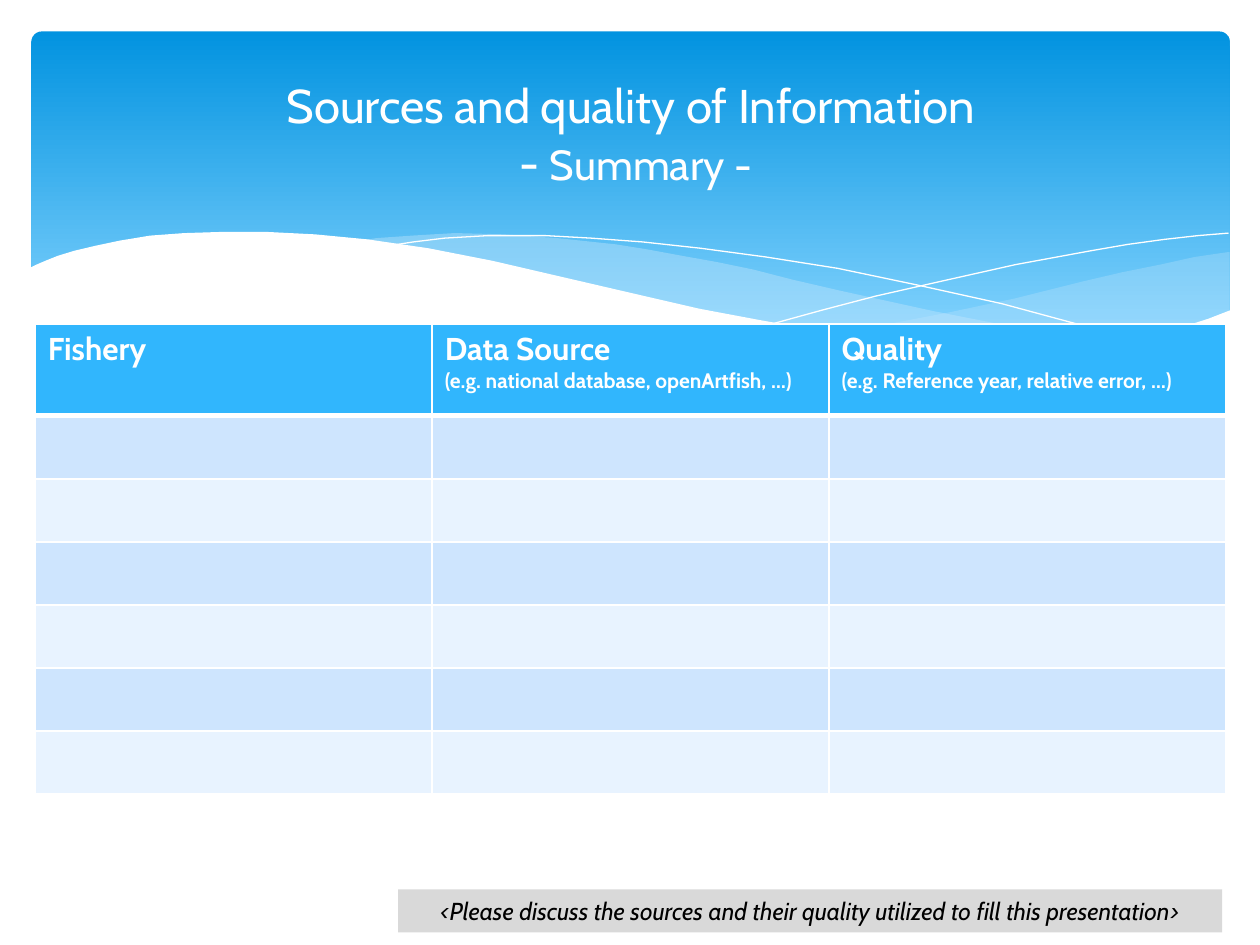
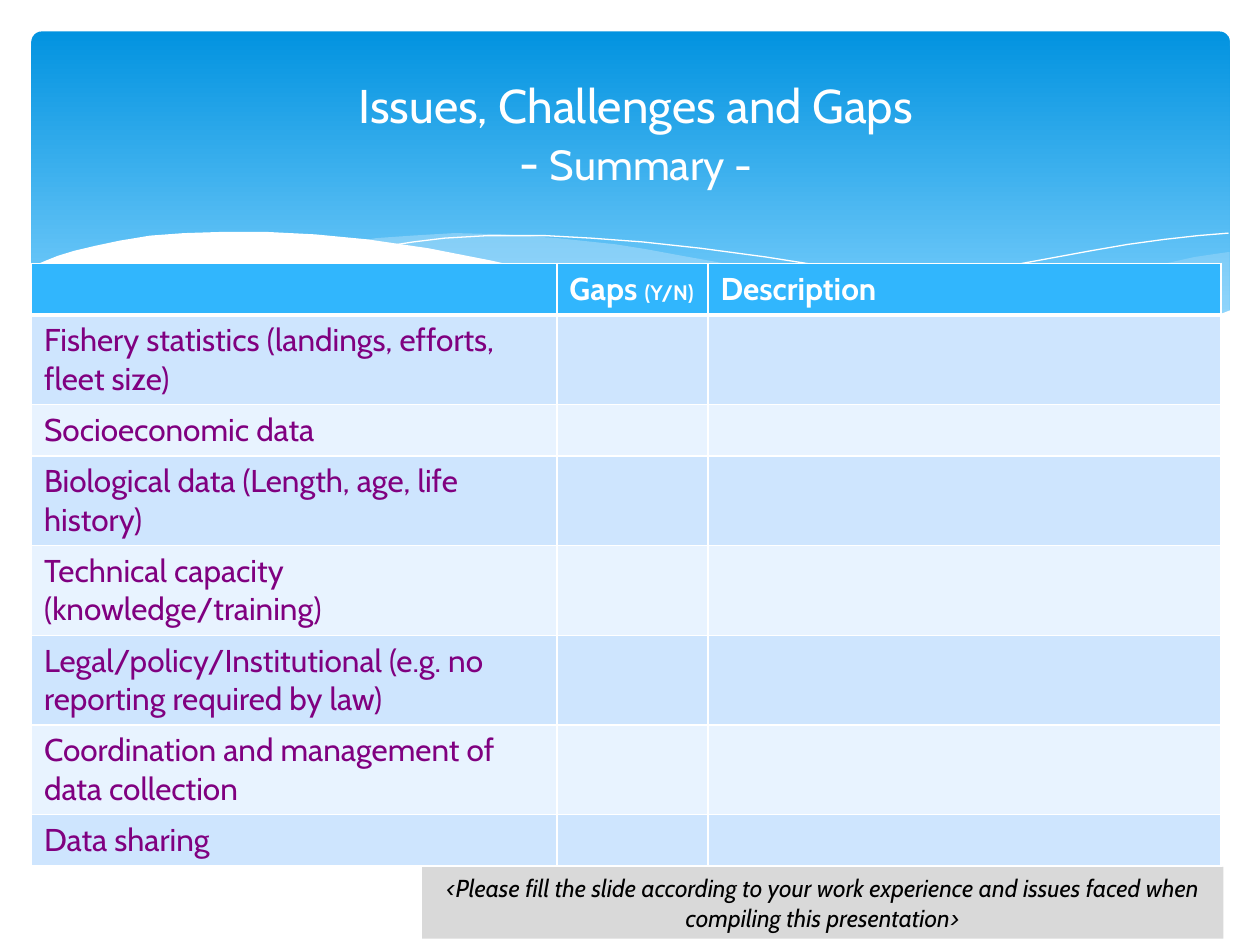
from copy import deepcopy

from lxml.etree import SubElement
from pptx import Presentation
from pptx.dml.color import RGBColor
from pptx.enum.shapes import MSO_SHAPE
from pptx.enum.text import MSO_ANCHOR, MSO_AUTO_SIZE, PP_ALIGN
from pptx.oxml.ns import qn
from pptx.util import Pt

EMU_PER_PX = 9144
PAGE = (0, 0, 1000, 750)
TITLE_BOX = (28, 37, 953, 137)
FONT = "Cabin"
WHITE, BLACK, PURPLE = "FFFFFF", "000000", "800080"
SKY_TOP, SKY_BOTTOM, MIST = "0293E0", "83D3FE", "C6E7FC"
HEADER_BLUE, NOTE_GRAY = "31B6FD", "D9D9D9"
ROW_TINTS = ("CEE5FE", "E8F3FF")

RIGHT_SWELL = [
    (975, 200), (948, 204), (921, 210), (891, 216), (861, 223), (805, 237),
    (753, 248), (706, 257), (661, 265), (691, 269), (719, 272), (745, 275),
    (781, 277), (814, 278), (844, 277), (872, 274), (897, 270), (921, 265),
    (942, 259), (963, 252), (976, 247), (976, 200),
]
MIDDLE_SWELL = [
    (893, 273), (866, 269), (807, 260), (741, 247), (668, 231), (629, 222),
    (598, 214), (569, 208), (541, 203), (514, 198), (489, 194), (442, 189),
    (399, 186), (361, 185), (328, 187), (299, 189), (286, 191), (323, 196),
    (362, 203), (404, 211), (449, 222), (530, 240), (601, 255), (650, 264),
    (695, 270), (736, 275), (773, 277), (807, 278), (848, 277), (876, 275),
]
FALLING_LINE = [
    (309, 195), (328, 192), (353, 189), (387, 187), (433, 187), (469, 189),
    (510, 192), (556, 197), (608, 204), (665, 213), (727, 226), (795, 241),
    (869, 261), (907, 272),
]
RISING_LINE = [
    (613, 257), (653, 246), (695, 235), (748, 223), (806, 210), (866, 199),
    (895, 194), (924, 190), (951, 187), (975, 185),
]
FOREGROUND_WAVE = [
    (977, 246), (959, 253), (940, 259), (920, 265), (899, 269), (875, 273),
    (850, 275), (823, 277), (793, 276), (761, 275), (726, 272), (688, 268),
    (648, 262), (603, 254), (555, 245), (503, 233), (447, 220), (391, 207),
    (340, 197), (292, 190), (250, 186), (211, 184), (177, 184), (146, 185),
    (119, 187), (95, 191), (76, 195), (59, 199), (46, 203), (36, 207),
    (29, 210), (23, 213), (23, 329), (977, 329),
]


def px(length):
    return int(length * EMU_PER_PX)


def color(hex_code):
    return RGBColor.from_string(hex_code)


def write(paragraph, text, size=18, ink=WHITE, bold=False, italic=False, align=None):
    if align is not None:
        paragraph.alignment = align
    run = None
    for line in text.split("\n"):
        if run is not None:
            paragraph.add_line_break()
            paragraph._p[-1].append(deepcopy(run._r.rPr))
        if line:
            run = paragraph.add_run()
            run.text = line
            font = run.font
            font.name, font.size = FONT, Pt(size)
            font.bold, font.italic = bold, italic
            font.color.rgb = color(ink)


def trace(slide, box, points, fill=None, opacity=100):
    left, top = box[:2]
    outline = [(left + x, top + y) for x, y in points]
    builder = slide.shapes.build_freeform(*outline[0], scale=EMU_PER_PX)
    builder.add_line_segments(outline[1:], close=fill is not None)
    wave = builder.convert_to_shape()
    wave.shadow.inherit = False
    if fill is None:
        wave.fill.background()
        wave.line.color.rgb = color(WHITE)
        wave.line.width = Pt(0)
        return
    wave.line.fill.background()
    wave.fill.solid()
    wave.fill.fore_color.rgb = color(fill)
    if opacity < 100:
        tint = wave.element.spPr.find(f"{qn('a:solidFill')}/{qn('a:srgbClr')}")
        SubElement(tint, qn("a:alpha"), val=str(opacity * 1000))


def add_block(slide, kind, box):
    block = slide.shapes.add_shape(kind, *map(px, box))
    block.shadow.inherit = False
    block.line.fill.background()
    return block


def add_banner(slide, box):
    left, top, width, _ = box
    sky = add_block(slide, MSO_SHAPE.ROUNDED_RECTANGLE,
                    (left + 25, top + 25, width - 49, 270))
    sky.adjustments[0] = 0.03
    sky.fill.gradient()
    sky.fill.gradient_angle = 270
    shades = ((0, SKY_TOP), (0.9, SKY_BOTTOM))
    for stop, (position, shade) in zip(sky.fill.gradient_stops, shades):
        stop.position = position
        stop.color.rgb = color(shade)
    trace(slide, box, RIGHT_SWELL, MIST, 29)
    trace(slide, box, MIDDLE_SWELL, MIST, 40)
    trace(slide, box, FALLING_LINE)
    trace(slide, box, RISING_LINE)
    trace(slide, box, FOREGROUND_WAVE, WHITE)


def add_title(slide, box, topic):
    title = slide.shapes.title
    title.element.getparent().append(title.element)
    title.left, title.top, title.width, title.height = map(px, box)
    frame = title.text_frame
    frame.auto_size = MSO_AUTO_SIZE.NONE
    frame.vertical_anchor = MSO_ANCHOR.MIDDLE
    heading = frame.paragraphs[0]
    write(heading, topic + "\n- ", size=27, align=PP_ALIGN.CENTER)
    write(heading, "Summary -", size=24)


def add_note(slide, box, instruction):
    note = add_block(slide, MSO_SHAPE.RECTANGLE, box)
    note.fill.solid()
    note.fill.fore_color.rgb = color(NOTE_GRAY)
    note.text_frame.word_wrap = True
    write(note.text_frame.paragraphs[0], instruction, size=14, ink=BLACK,
          italic=True, align=PP_ALIGN.CENTER)


def style_cell(cell, fill, top=1, bottom=1):
    properties = cell._tc.get_or_add_tcPr()
    for side, points in (("L", 1), ("R", 1), ("T", top), ("B", bottom)):
        edge = SubElement(properties, qn(f"a:ln{side}"), w=str(Pt(points)))
        paint = SubElement(edge, qn("a:solidFill"))
        SubElement(paint, qn("a:srgbClr"), val=WHITE)
    cell.fill.solid()
    cell.fill.fore_color.rgb = color(fill)


def add_summary_table(slide, box, widths, heights, headings, topics=()):
    grid = slide.shapes.add_table(len(heights), len(widths), *map(px, box)).table
    for column, width in zip(grid.columns, widths):
        column.width = px(width)
    for index, (row, height) in enumerate(zip(grid.rows, heights)):
        row.height = px(height)
        for cell in row.cells:
            if index == 0:
                style_cell(cell, HEADER_BLUE, bottom=3)
            else:
                style_cell(cell, ROW_TINTS[(index - 1) % 2], top=3 if index == 1 else 1)
    for cell, (heading, hint) in zip(grid.rows[0].cells, headings):
        paragraph = cell.text_frame.paragraphs[0]
        write(paragraph, heading, bold=True)
        write(paragraph, hint, size=12, bold=True)
    for index, topic in enumerate(topics, 1):
        write(grid.cell(index, 0).text_frame.paragraphs[0], topic, ink=PURPLE)


def add_summary_slide(deck, topic, note_box, instruction, **table):
    slide = deck.slides.add_slide(deck.slide_layouts[5])
    add_banner(slide, PAGE)
    add_title(slide, TITLE_BOX, topic)
    add_note(slide, note_box, instruction)
    add_summary_table(slide, **table)


def main():
    deck = Presentation()
    deck.slide_width, deck.slide_height = px(PAGE[2]), px(PAGE[3])
    add_summary_slide(
        deck, "Sources and quality of Information ", (316, 706, 654, 34),
        "<Please discuss the sources and their quality utilized to fill this presentation>",
        box=(28, 257, 945, 373),
        widths=[315] * 3,
        heights=[73] + [50] * 6,
        headings=[
            ("Fishery", ""),
            ("Data Source\n", "(e.g. national database, openArtfish, …)"),
            ("Quality \n", "(e.g. Reference year, relative error, …)"),
        ],
    )
    add_summary_slide(
        deck, "Issues, Challenges and Gaps", (335, 688, 636, 57),
        "<Please fill the slide according to your work experience and issues "
        "faced when compiling this presentation>",
        box=(25, 209, 944, 473),
        widths=[417, 120, 407],
        heights=[41, 70, 41, 70, 70, 70, 70, 41],
        headings=[("", ""), ("Gaps ", "(Y/N)"), ("Description", "")],
        topics=[
            "Fishery statistics (landings, efforts, fleet size)",
            "Socioeconomic data",
            "Biological data (Length, age, life history)",
            "Technical capacity (knowledge/training)",
            "Legal/policy/Institutional (e.g. no reporting required by law)",
            "Coordination and management of data collection",
            "Data sharing",
        ],
    )
    deck.save("out.pptx")


if __name__ == "__main__":
    main()
